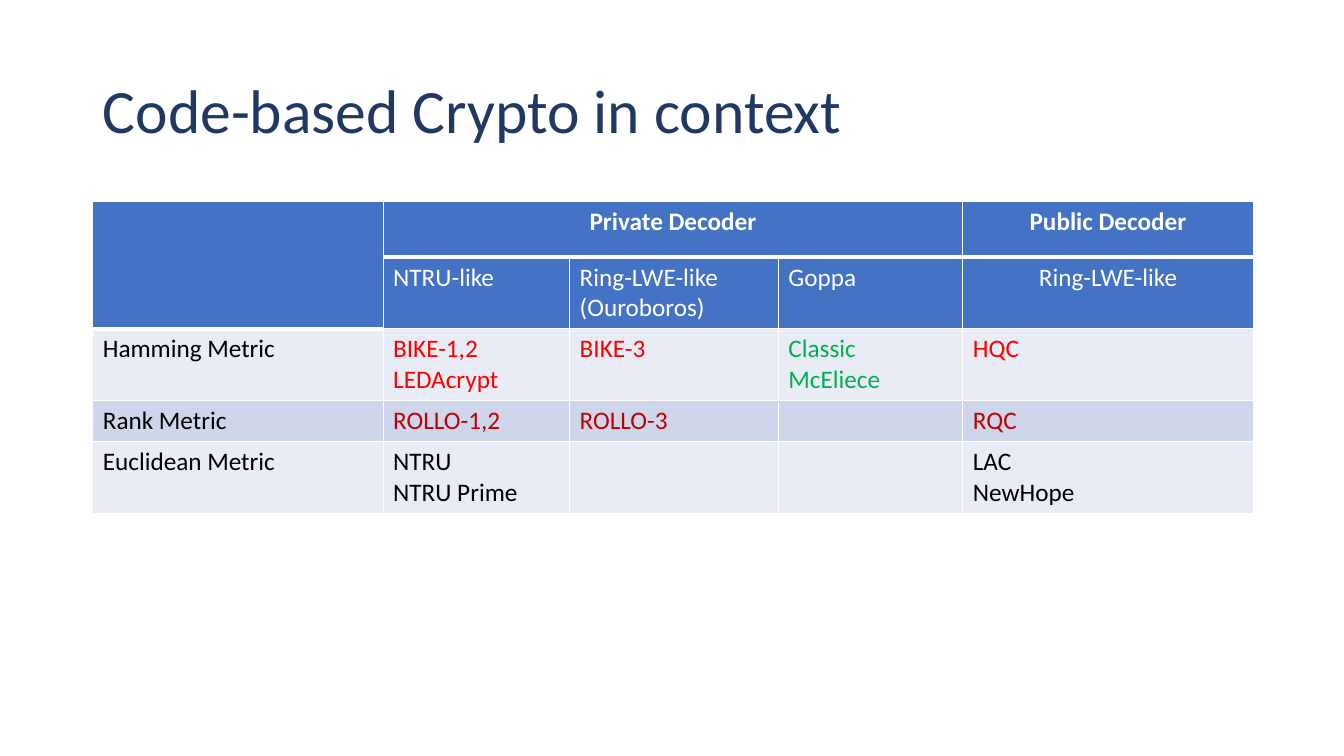
from typing import NamedTuple

from lxml.etree import SubElement
from pptx import Presentation
from pptx.dml.color import RGBColor
from pptx.enum.text import MSO_ANCHOR, PP_ALIGN
from pptx.oxml.ns import qn
from pptx.util import Inches, Pt

BLUE, PALE, MID = "4472C4", "E9EBF5", "CFD5EA"
WHITE, BLACK, RED, DARK_RED, GREEN = "FFFFFF", "000000", "FF0000", "C00000", "00B050"
COL_WIDTHS = [2.88, 1.85, 2.07, 1.83, 2.88]
ROW_HEIGHTS = [0.55, 0.71, 0.71, 0.41, 0.71]
ROW_FILLS = [BLUE, BLUE, PALE, MID, PALE]


class Entry(NamedTuple):
    """Text of one table cell with its format."""
    text: str = ""
    color: str = BLACK
    bold: bool = False
    align: PP_ALIGN = PP_ALIGN.LEFT


def heading(text: str, bold: bool = False, align: PP_ALIGN = PP_ALIGN.LEFT) -> Entry:
    """Return a white header entry."""
    return Entry(text, WHITE, bold, align)


CENTER = PP_ALIGN.CENTER
ROWS = [
    [Entry(), heading("Private Decoder", True, CENTER), Entry(), Entry(),
     heading("Public Decoder", True, CENTER)],
    [Entry(), heading("NTRU-like"), heading("Ring-LWE-like\n(Ouroboros)"),
     heading("Goppa"), heading("Ring-LWE-like", align=CENTER)],
    [Entry("Hamming Metric"), Entry("BIKE-1,2\nLEDAcrypt", RED), Entry("BIKE-3", RED),
     Entry("Classic McEliece", GREEN), Entry("HQC", RED)],
    [Entry("Rank Metric"), Entry("ROLLO-1,2", DARK_RED), Entry("ROLLO-3", DARK_RED),
     Entry(), Entry("RQC", DARK_RED)],
    [Entry("Euclidean Metric"), Entry("NTRU\nNTRU Prime"), Entry(), Entry(),
     Entry("LAC\nNewHope")],
]


def rgb(color: str) -> RGBColor:
    """Convert a hex string to a colour."""
    return RGBColor.from_string(color)


def write(tf, text: str, *, size: float = 18, color: str = BLACK, bold: bool = False,
          align: PP_ALIGN = PP_ALIGN.LEFT, spacing: float = 1.0) -> None:
    """Fill a text frame, one paragraph per line of text."""
    for i, line in enumerate(text.split("\n")):
        p = tf.add_paragraph() if i else tf.paragraphs[0]
        p.alignment, p.line_spacing = align, spacing
        r = p.add_run()
        r.text = line
        r.font.name, r.font.size, r.font.bold = "Calibri", Pt(size), bold
        r.font.color.rgb = rgb(color)


def add_border(cell, side: str, width: float) -> None:
    """Draw a white line on one side (L, R, T or B) of a cell."""
    ln = SubElement(cell._tc.get_or_add_tcPr(), qn(f"a:ln{side}"), w=str(Pt(width)))
    SubElement(SubElement(ln, qn("a:solidFill")), qn("a:srgbClr"), val=WHITE)


def add_metric_table(s) -> None:
    """Add the table of schemes by metric and decoder."""
    table = s.shapes.add_table(len(ROWS), len(COL_WIDTHS), Inches(0.92), Inches(2),
                               Inches(sum(COL_WIDTHS)), Inches(sum(ROW_HEIGHTS))).table
    for col, width in zip(table.columns, COL_WIDTHS):
        col.width = Inches(width)
    for row, height in zip(table.rows, ROW_HEIGHTS):
        row.height = Inches(height)
    for i, entries in enumerate(ROWS):
        for j, entry in enumerate(entries):
            cell = table.cell(i, j)
            thick_bottom = i == 0 or (i, j) == (1, 0)
            add_border(cell, "L", 1)
            add_border(cell, "R", 1)
            if i == 0:
                add_border(cell, "T", 1)
            add_border(cell, "B", 3 if thick_bottom else 1)
            cell.fill.solid()
            cell.fill.fore_color.rgb = rgb(ROW_FILLS[i])
            if entry.text:
                write(cell.text_frame, entry.text, color=entry.color,
                      bold=entry.bold, align=entry.align)
    table.cell(0, 0).merge(table.cell(1, 0))
    table.cell(0, 1).merge(table.cell(0, 3))


def main() -> None:
    """Build and save the slide."""
    prs = Presentation()
    prs.slide_width, prs.slide_height = Inches(13.33), Inches(7.5)
    s = prs.slides.add_slide(prs.slide_layouts[5])
    title = s.shapes.title
    title.left, title.top = Inches(0.92), Inches(0.4)
    title.width, title.height = Inches(11.5), Inches(1.45)
    title.text_frame.vertical_anchor = MSO_ANCHOR.MIDDLE
    write(title.text_frame, "Code-based Crypto in context", size=44,
          color="203864", spacing=0.9)
    add_metric_table(s)
    prs.save("out.pptx")


if __name__ == "__main__":
    main()
